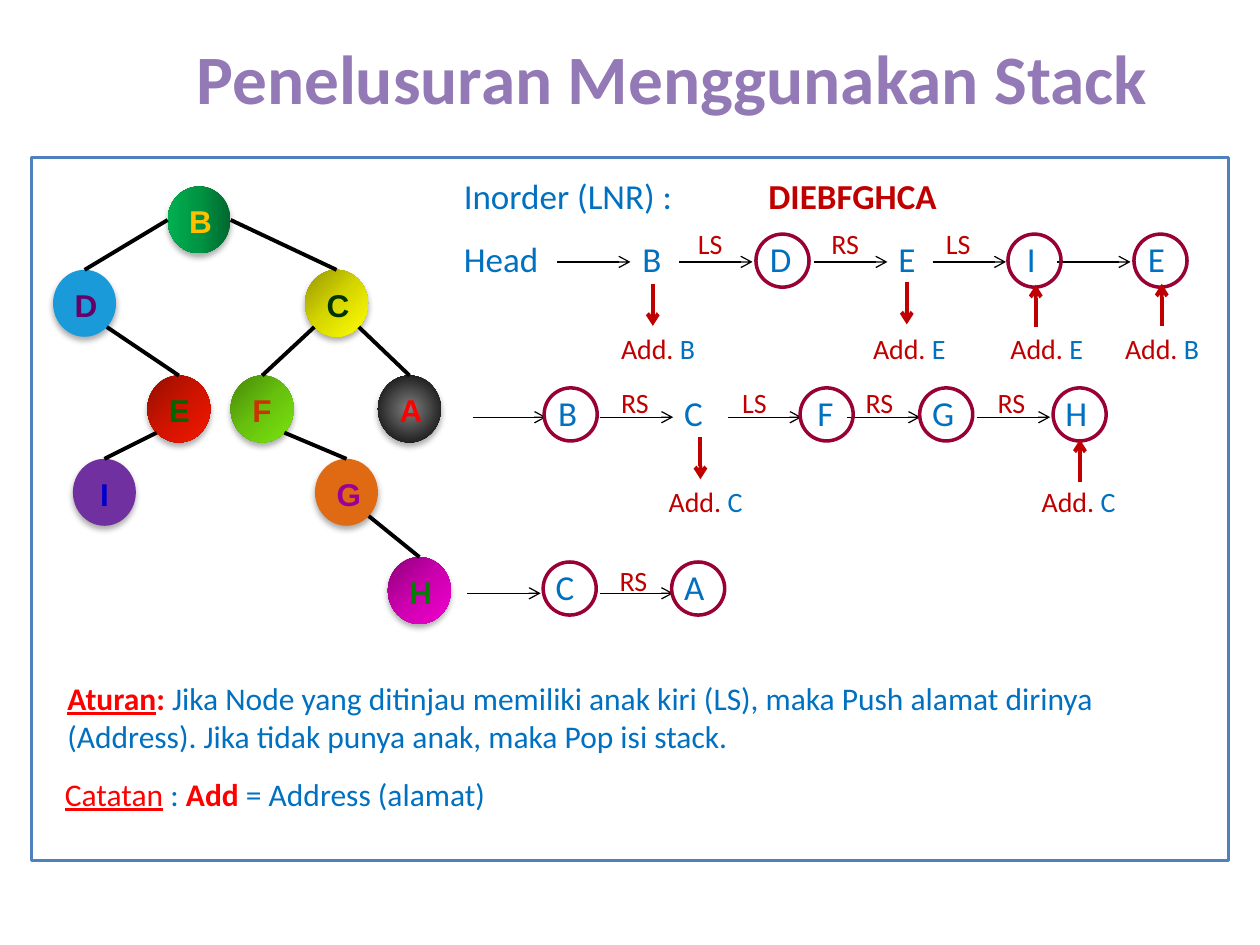
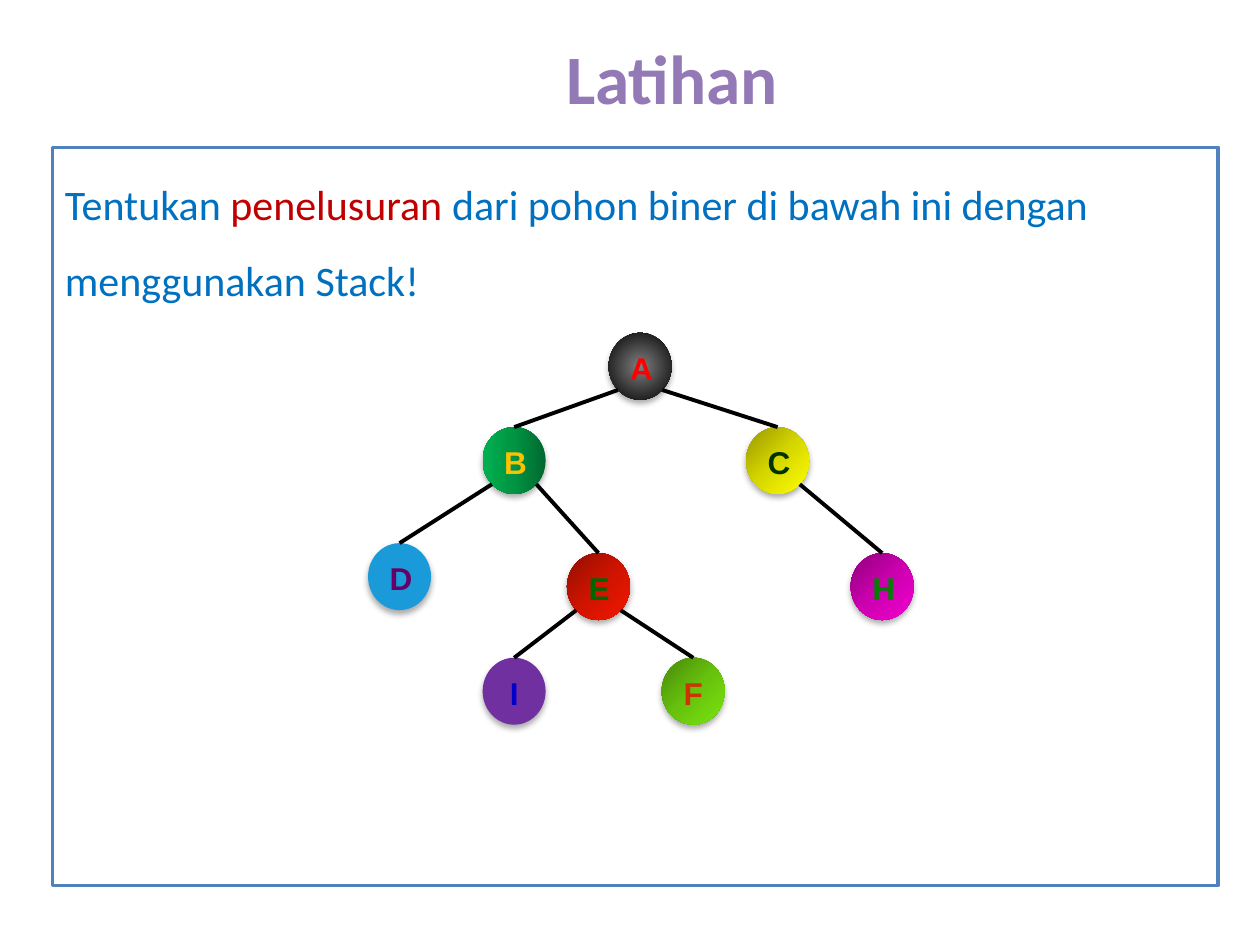
from lxml import etree
from pptx import Presentation
from pptx.dml.color import RGBColor
from pptx.enum.shapes import MSO_CONNECTOR, MSO_SHAPE
from pptx.enum.text import MSO_ANCHOR, PP_ALIGN
from pptx.oxml import parse_xml
from pptx.oxml.ns import nsdecls, qn
from pptx.util import Cm, Pt

RECT, OVAL = MSO_SHAPE.RECTANGLE, MSO_SHAPE.OVAL
LINE = MSO_CONNECTOR.STRAIGHT
LEFT, CENTER = PP_ALIGN.LEFT, PP_ALIGN.CENTER
TOP, MIDDLE = MSO_ANCHOR.TOP, MSO_ANCHOR.MIDDLE

COLORS = {
    "title": "9379B5", "frame": "4F81BD", "text": "0070C0", "dark": "C00000",
    "red": "FF0000", "ring": "990033", "black": "000000",
}

# Letter: text colour, fill colours, gradient angle (None means radial)
NODES = {
    "A": ("FF0000", ["7F7F7F", "000000"], None),
    "B": ("FFC000", ["00682F", "009443", "00B050"], 180),
    "C": ("003300", ["979700", "D7D700", "FFFF00"], 45),
    "D": ("660066", ["1B9AD9"], 0),
    "E": ("006600", ["910E00", "CE1400", "F41700"], 45),
    "F": ("CC3300", ["488809", "67C10D", "7AE50F"], 45),
    "G": ("990099", ["DF6A13"], 0),
    "H": ("008000", ["8F007B", "CC00AF", "F200CF"], 45),
    "I": ("0000CC", ["7030A0"], 0),
}
NODE_W, NODE_H = 1.27, 1.35
DIAG = 0.707  # share of the radius at a 45 degree point
ARROW, DROP, RING = 1.48, 0.85, 1.07

# First slide: tree spots, then the rows of the trace
STACK_TREE = {
    "A": (7.62, 7.57), "B": (3.38, 3.76), "C": (6.15, 5.44),
    "D": (1.07, 5.44), "E": (2.97, 7.57), "F": (4.65, 7.57),
    "G": (6.35, 9.25), "H": (7.82, 11.23), "I": (1.47, 9.25),
}
TASK_TREE = {
    "A": (12.27, 6.71), "B": (9.73, 8.61), "C": (15.04, 8.61),
    "D": (7.42, 10.95), "E": (11.43, 11.15), "F": (13.34, 13.26),
    "H": (17.15, 11.15), "I": (9.73, 13.26),
}
# Each row: letter top, arrow y, label top, letters (text, x, ring x),
# arrow starts, labels (text, x)
ROWS = [
    (4.67, 5.28, 4.45,
     [("B", 12.7, None), ("D", 15.27, 15.24), ("E", 17.86, None),
      ("I", 20.45, 20.32), ("E", 22.89, 22.86)],
     [11.23, 13.69, 16.41, 18.8, 21.31],
     [("LS", 13.82), ("RS", 16.51), ("LS", 18.82)]),
    (7.77, 8.41, 7.65,
     [("B", 11, 10.97), ("C", 13.54, None), ("F", 16.23, 16.13),
      ("G", 18.54, 18.54), ("H", 21.23, 21.23)],
     [9.53, 12.09, 14.68, 17.07, 19.69],
     [("RS", 12.27), ("LS", 14.71), ("RS", 17.2), ("RS", 19.86)]),
    (11.28, 11.96, 11.23,
     [("C", 10.95, 10.95), ("A", 13.54, 13.54)],
     [9.42, 12.09], [("RS", 12.24)]),
]
# Address: letter, text x, text y, arrow x, arrow top, popped
STACK = [
    ("B", 12.27, 6.55, 13.16, 5.72, False),
    ("E", 17.35, 6.55, 18.28, 5.69, False),
    ("E", 20.12, 6.55, 20.88, 5.74, True),
    ("B", 22.43, 6.55, 23.42, 5.72, True),
    ("C", 13.23, 9.65, 14.12, 8.81, False),
    ("C", 20.75, 9.65, 21.77, 8.86, True),
]


def rgb(name):
    return RGBColor.from_string(COLORS.get(name, name))


def write(frame, runs, size, font="Calibri", align=LEFT, anchor=TOP):
    """Fill a text frame with runs of (text, colour, format)."""
    frame.word_wrap = True
    frame.vertical_anchor = anchor
    para = frame.paragraphs[0]
    para.alignment = align
    for text, color, form in runs:
        run = para.add_run()
        run.text = text
        run.font.color.rgb = rgb(color)
        for key, value in {"size": Pt(size), "name": font, **form}.items():
            setattr(run.font, key, value)
    return para


def label(slide, x, y, w, h, runs, size, **form):
    box = slide.shapes.add_textbox(Cm(x), Cm(y), Cm(w), Cm(h))
    write(box.text_frame, runs, size, **form)


def outline(slide, kind, x, y, w, h, color):
    shape = slide.shapes.add_shape(kind, Cm(x), Cm(y), Cm(w), Cm(h))
    shape.shadow.inherit = False
    shape.fill.background()
    shape.line.color.rgb = rgb(color)
    shape.line.width = Pt(2)
    return shape


def line(slide, start, end, color, width, arrow=False):
    link = slide.shapes.add_connector(LINE, *map(Cm, start + end))
    link.line.color.rgb = rgb(color)
    link.line.width = Pt(width)
    props = link._element.spPr
    etree.SubElement(props, qn("a:effectLst"))
    if arrow:
        etree.SubElement(props.find(qn("a:ln")), qn("a:tailEnd"), type="arrow")
    return link


def blend(shape, colors, angle):
    """Give a shape an evenly spaced linear or radial gradient."""
    step = 100000 // (len(colors) - 1)
    stops = "".join(
        f'<a:gs pos="{i * step}"><a:srgbClr val="{color}"/></a:gs>'
        for i, color in enumerate(colors))
    if angle is None:
        way = ('<a:path path="circle"><a:fillToRect l="50000" t="50000" '
               'r="50000" b="50000"/></a:path>')
    else:
        way = f'<a:lin ang="{angle * 60000}" scaled="1"/>'
    grad = parse_xml(f'<a:gradFill {nsdecls("a")} rotWithShape="1">'
                     f'<a:gsLst>{stops}</a:gsLst>{way}</a:gradFill>')
    shape._element.spPr.find(qn("a:prstGeom")).addnext(grad)


def shade(shape):
    """Add a soft shadow below a shape."""
    shape.shadow.inherit = False
    cast = parse_xml(
        f'<a:outerShdw {nsdecls("a")} blurRad="44450" dist="27940" '
        'dir="5400000" algn="ctr" rotWithShape="0"><a:srgbClr val="000000">'
        '<a:alpha val="32000"/></a:srgbClr></a:outerShdw>')
    shape._element.spPr.find(qn("a:effectLst")).append(cast)


def node(slide, name, x, y):
    color, fills, angle = NODES[name]
    ball = slide.shapes.add_shape(OVAL, Cm(x), Cm(y), Cm(NODE_W), Cm(NODE_H))
    ball.line.fill.background()
    if len(fills) == 1:
        ball.fill.solid()
        ball.fill.fore_color.rgb = rgb(fills[0])
    else:
        blend(ball, fills, angle)
    shade(ball)
    write(ball.text_frame, [(name, color, {"bold": True})], 18, "Arial", CENTER)
    return ball


def tree(slide, spots, edges, flat=""):
    """Draw nodes and edges; parents in flat are left from mid-side."""
    balls = {name: node(slide, name, *spot) for name, spot in spots.items()}
    for top, low in edges.split():
        x, y = spots[top]
        side = 1 if spots[low][0] > x else -1
        across, down = (1, 0) if top in flat else (DIAG, DIAG)
        start = (x + NODE_W / 2 * (1 + side * across), y + NODE_H / 2 * (1 + down))
        end = (spots[low][0] + NODE_W / 2, spots[low][1])
        line(slide, start, end, "black", 2.25).end_connect(balls[low], 0)


def trace(slide):
    """Draw the rows of visits and the stack moves below them."""
    for top, mid, high, names, starts, marks in ROWS:
        for x in starts:
            line(slide, (x, mid), (x + ARROW, mid), "black", 0.75, True)
        for name, x, ring in names:
            label(slide, x, top, RING, 1.11, [(name, "text", {})], 20)
            if ring is not None:
                outline(slide, OVAL, ring, top + 0.05, RING, RING, "ring")
        for mark, x in marks:
            label(slide, x, high, 1.5, 0.94, [(mark, "dark", {})], 16)
    for name, x, y, shaft, top, popped in STACK:
        runs = [("Add. ", "dark", {}), (name, "text", {})]
        label(slide, x, y, 2.54, 0.94, runs, 16)
        ends = [(shaft, top), (shaft, top + DROP)]
        if popped:
            ends.reverse()
        line(slide, *ends, "dark", 2.25, True)


def page(deck, title, frame):
    """Start a slide with its title and frame."""
    slide = deck.slides.add_slide(deck.slide_layouts[6])
    label(slide, 2.12, 0.76, 22.86, 1.57, [(title, "title", {"bold": True})],
          39.6, align=CENTER, anchor=MIDDLE)
    return slide, outline(slide, RECT, *frame, "frame")


def main():
    deck = Presentation()
    deck.slide_width, deck.slide_height = Cm(25.4), Cm(19.05)
    bold, under = {"bold": True}, {"underline": True}

    # Inorder trace with a stack
    slide, _ = page(deck, "Penelusuran Menggunakan Stack",
                    (0.64, 3.18, 24.13, 14.17))
    tree(slide, STACK_TREE, "BD BC DE EI CF CA FG GH", flat="B")
    label(slide, 9.1, 3.39, 6.35, 1.11, [("Inorder (LNR) :", "text", {})], 20)
    label(slide, 15.24, 3.39, 7.2, 1.11, [("DIEBFGHCA", "dark", bold)], 20)
    label(slide, 9.1, 4.67, 2.54, 1.11, [("Head", "text", {})], 20)
    trace(slide)
    label(slide, 1.11, 13.56, 23.57, 1.8, [
        ("Aturan", "red", {**bold, **under}), (": ", "red", bold),
        ("Jika Node yang ditinjau memiliki anak kiri (LS), maka Push alamat "
         "dirinya (Address). Jika tidak punya anak, maka Pop isi stack.",
         "text", {})], 18)
    label(slide, 1.06, 15.49, 23.28, 1.02, [
        ("Catatan", "red", under), (" : ", "text", {}), ("Add", "red", bold),
        (" = Address (alamat)", "text", {})], 18)

    # Exercise
    slide, frame = page(deck, "Latihan", (1.06, 2.97, 23.5, 14.88))
    para = write(frame.text_frame, [
        ("Tentukan ", "text", {}), ("penelusuran ", "dark", {}),
        ("dari pohon biner di bawah ini dengan menggunakan Stack!",
         "text", {})], 24)
    para.line_spacing = 1.5
    tree(slide, TASK_TREE, "AB AC BD BE CH EI EF")

    deck.save("out.pptx")


if __name__ == "__main__":
    main()
